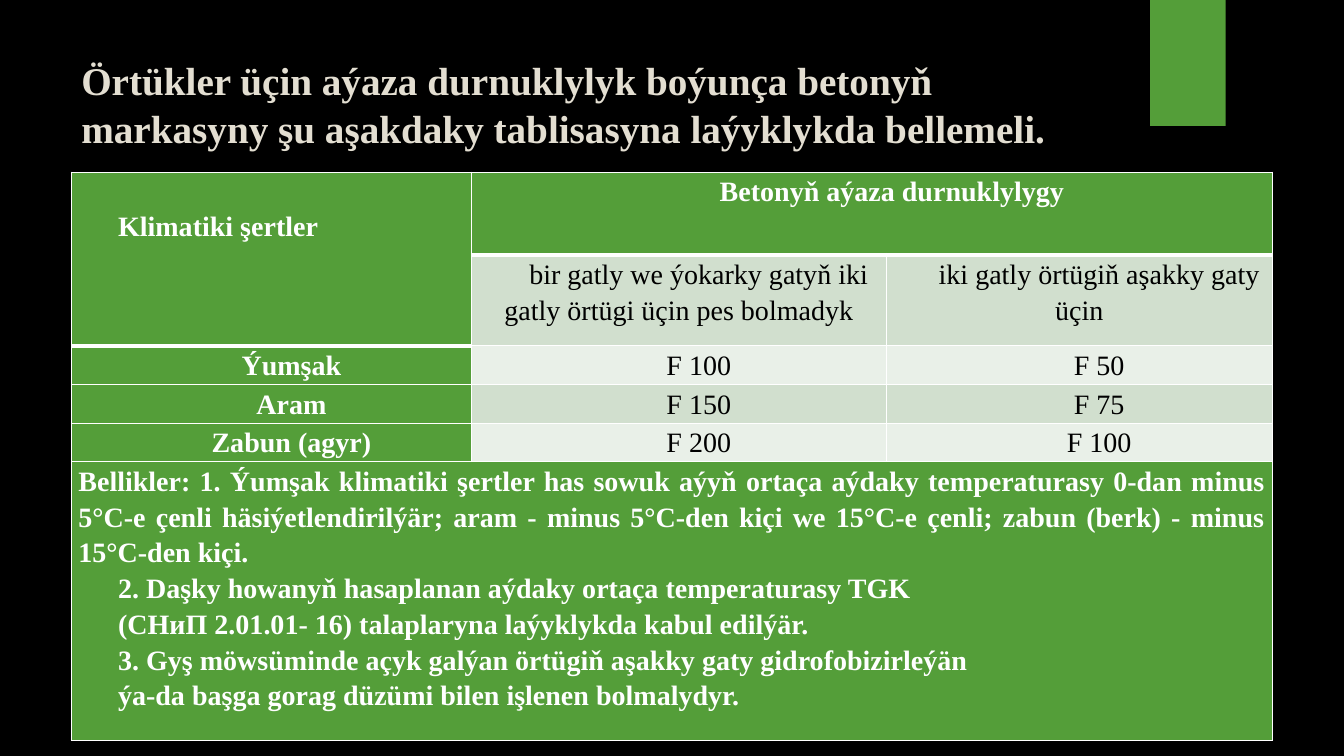
from dataclasses import dataclass

from lxml.etree import SubElement
from pptx import Presentation
from pptx.dml.color import RGBColor
from pptx.enum.shapes import MSO_SHAPE
from pptx.enum.text import MSO_ANCHOR, PP_ALIGN
from pptx.oxml.ns import qn
from pptx.util import Pt


@dataclass(frozen=True)
class Theme:
    font: str = "Times New Roman"
    title_size: float = 28
    body_size: float = 20
    background: str = "000000"
    accent: str = "549E39"
    title: str = "E3DED1"
    light: str = "FFFFFF"
    dark: str = "000000"
    bands: tuple = ("D1DFCE", "E9F0E8")
    thin: float = 1
    thick: float = 3


THEME = Theme()
INDENT = 28.35
LINE = 25

TITLE = ("Örtükler üçin aýaza durnuklylyk boýunça betonyň markasyny "
         "şu aşakdaky tablisasyna laýyklykda bellemeli.")
CORNER = "Klimatiki şertler"
GROUP = "Betonyň aýaza durnuklylygy"
BODY = [
    ("bir gatly we ýokarky gatyň iki gatly örtügi üçin pes bolmadyk",
     "iki gatly örtügiň aşakky gaty üçin"),
    ("F 100", "F 50"),
    ("F 150", "F 75"),
    ("F 200", "F 100"),
]
CLIMATES = ["Ýumşak", "Aram", "Zabun (agyr)"]
NOTES = [
    "Bellikler: 1. Ýumşak klimatiki şertler has sowuk aýyň ortaça aýdaky "
    "temperaturasy 0-dan minus 5°С-e çenli häsiýetlendirilýär; aram - minus "
    "5°С-den kiçi we 15°С-e çenli; zabun (berk) - minus 15°С-den kiçi.",
    "2. Daşky howanyň hasaplanan aýdaky ortaça temperaturasy TGK",
    "(СНиП 2.01.01- 16) talaplaryna laýyklykda kabul edilýär.",
    "3. Gyş möwsüminde açyk galýan örtügiň aşakky gaty gidrofobizirleýän",
    "ýa-da başga gorag düzümi bilen işlenen bolmalydyr.",
]
COLUMNS = [286, 296, 276]
ROWS = [59, 65, 27.3, 27.3, 27.3, 199]


def add_run(p, text, size, color, bold):
    r = p.add_run()
    r.text = text
    r.font.name = THEME.font
    r.font.size = Pt(size)
    r.font.bold = bold
    r.font.color.rgb = RGBColor.from_string(color)


def add_title(s, left, top, width, height):
    tf = s.shapes.add_textbox(Pt(left), Pt(top), Pt(width), Pt(height)).text_frame
    tf.word_wrap = True
    tf.vertical_anchor = MSO_ANCHOR.TOP
    add_run(tf.paragraphs[0], TITLE, THEME.title_size, THEME.title, True)


def add_tab(s, left, top, width, height):
    """Draw the accent block hanging from the top edge."""
    sp = s.shapes.add_shape(MSO_SHAPE.RECTANGLE, Pt(left), Pt(top), Pt(width), Pt(height))
    sp.shadow.inherit = False
    sp.fill.solid()
    sp.fill.fore_color.rgb = RGBColor.from_string(THEME.accent)
    sp.line.fill.background()


def fill_cell(cell, texts, fill, color=THEME.light, bold=True,
              align=PP_ALIGN.CENTER, indents=(INDENT,), top=0):
    """Write one paragraph per text; the last indent serves the rest."""
    cell.fill.solid()
    cell.fill.fore_color.rgb = RGBColor.from_string(fill)
    cell.margin_left = cell.margin_right = Pt(5)
    cell.margin_top, cell.margin_bottom = Pt(top), Pt(0)
    for i, text in enumerate(texts):
        tf = cell.text_frame
        p = tf.add_paragraph() if i else tf.paragraphs[0]
        p.alignment = align
        p.line_spacing = 1.15
        indent = indents[min(i, len(indents) - 1)]
        pPr = p._p.get_or_add_pPr()
        pPr.set("marL", "0")
        pPr.set("indent", str(Pt(indent)))
        add_run(p, text, THEME.body_size, color, bold)


def set_borders(cell, row, col):
    """Thin white edges, thick below the header cells."""
    header_end = 2 if col == 0 else 1
    tcPr = cell._tc.get_or_add_tcPr()
    edges = {"lnL": False, "lnR": False,
             "lnT": row == header_end, "lnB": row + 1 == header_end}
    for i, (tag, thick) in enumerate(edges.items()):
        ln = SubElement(tcPr, qn(f"a:{tag}"))
        ln.set("w", str(Pt(THEME.thick if thick else THEME.thin)))
        SubElement(SubElement(ln, qn("a:solidFill")), qn("a:srgbClr")).set("val", THEME.light)
        tcPr.insert(i, ln)


def add_frost_table(s, left, top):
    table = s.shapes.add_table(len(ROWS), len(COLUMNS), Pt(left), Pt(top),
                               Pt(sum(COLUMNS)), Pt(sum(ROWS))).table
    table.first_row = table.horz_banding = False
    for column, width in zip(table.columns, COLUMNS):
        column.width = Pt(width)
    for row, height in zip(table.rows, ROWS):
        row.height = Pt(height)

    last = len(ROWS) - 1
    table.cell(0, 0).merge(table.cell(1, 0))
    table.cell(0, 1).merge(table.cell(0, 2))
    table.cell(last, 0).merge(table.cell(last, 2))

    fill_cell(table.cell(0, 0), [CORNER], THEME.accent, align=PP_ALIGN.JUSTIFY, top=LINE)
    fill_cell(table.cell(0, 1), [GROUP], THEME.accent)
    for row, climate in enumerate(CLIMATES, 2):
        fill_cell(table.cell(row, 0), [climate], THEME.accent)
    for row, values in enumerate(BODY, 1):
        for col, value in enumerate(values, 1):
            fill_cell(table.cell(row, col), [value], THEME.bands[(row - 1) % 2],
                      THEME.dark, False)
    fill_cell(table.cell(last, 0), NOTES, THEME.accent,
              align=PP_ALIGN.JUSTIFY, indents=(0, INDENT))

    for row in range(len(ROWS)):
        for col in range(len(COLUMNS)):
            set_borders(table.cell(row, col), row, col)


def main():
    prs = Presentation()
    prs.slide_width, prs.slide_height = Pt(960), Pt(540)
    s = prs.slides.add_slide(prs.slide_layouts[6])
    s.background.fill.solid()
    s.background.fill.fore_color.rgb = RGBColor.from_string(THEME.background)
    add_tab(s, 821.5, 0, 54, 90)
    add_title(s, 51, 37, 741, 110)
    add_frost_table(s, 51, 123)
    prs.save("out.pptx")


if __name__ == "__main__":
    main()
